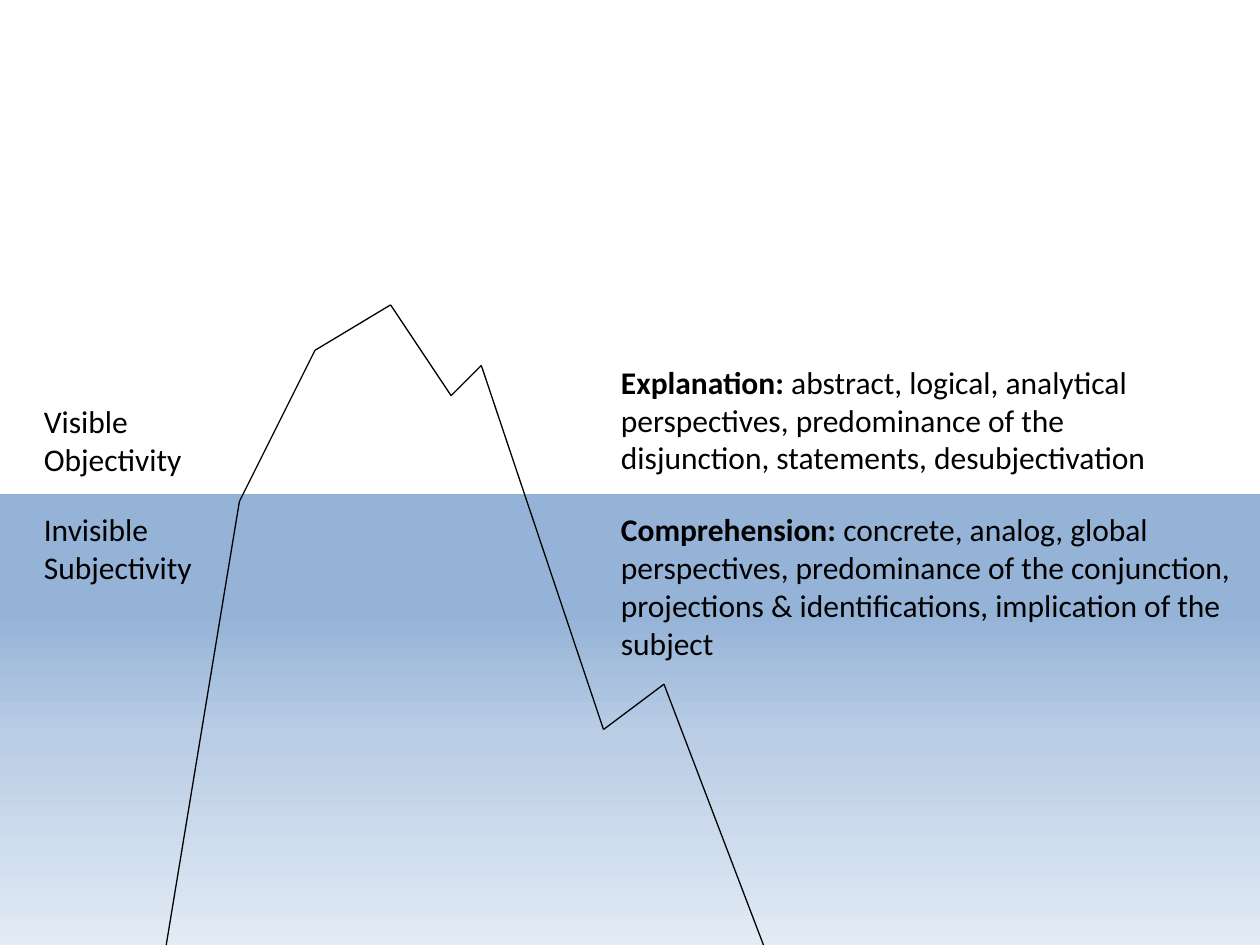
import copy
import itertools

import pptx
import pptx.dml.color
import pptx.enum.shapes
import pptx.enum.text
import pptx.oxml.ns
import pptx.util

Inches = pptx.util.Inches
RGBColor = pptx.dml.color.RGBColor
ANCHOR = pptx.enum.text.MSO_ANCHOR
qn = pptx.oxml.ns.qn

BLACK = RGBColor(0x00, 0x00, 0x00)
WATER = [
    (0.25, RGBColor(0x95, 0xB3, 0xD7)),
    (0.50, RGBColor(0xB9, 0xCD, 0xE5)),
    (1.00, RGBColor(0xE9, 0xEF, 0xF7)),
]

ICEBERG = [(1.25, 7.92), (1.9, 3.98), (2.5, 2.78), (3.1, 2.42), (3.58, 3.14),
           (3.82, 2.9), (4.79, 5.79), (5.27, 5.43), (6.25, 8)]

LEFT_X, RIGHT_X = 0.25, 4.83
ABOVE_Y, BELOW_Y = 2.83, 4

# (left, top, width, height), anchor, paragraphs of (text, bold) runs
LABELS = [
    ((LEFT_X, ABOVE_Y, 1.67, 1.01), ANCHOR.BOTTOM,
     [[("Visible", False)], [("Objectivity", False)]]),
    ((LEFT_X, BELOW_Y, 1.67, 0.71), ANCHOR.TOP,
     [[("Invisible", False)], [("Subjectivity", False)]]),
    ((RIGHT_X, ABOVE_Y, 4.58, 1.01), ANCHOR.TOP,
     [[("Explanation:", True),
       (" abstract, logical, analytical perspectives, predominance of the "
        "disjunction, statements, desubjectivation", False)]]),
    ((RIGHT_X, BELOW_Y, 5.17, 1.31), ANCHOR.TOP,
     [[("Comprehension:", True),
       (" concrete, analog, global perspectives, predominance of the "
        "conjunction, projections & identifications, implication of the "
        "subject", False)]]),
]


def add_water(shapes):
    sp = shapes.add_shape(pptx.enum.shapes.MSO_SHAPE.RECTANGLE,
                          Inches(0), Inches(3.92), Inches(10), Inches(3.83))
    sp.shadow.inherit = False
    sp.line.fill.background()
    sp.fill.gradient()
    sp.fill.gradient_angle = 270
    stops = next(sp._element.spPr.iter(qn("a:gsLst")))
    stops.append(copy.deepcopy(stops[-1]))
    for stop, (position, color) in zip(sp.fill.gradient_stops, WATER):
        stop.position = position
        stop.color.rgb = color


def add_edge(shapes, start, end):
    line = shapes.add_connector(pptx.enum.shapes.MSO_CONNECTOR.STRAIGHT,
                                *map(Inches, start + end))
    line.line.color.rgb = BLACK
    line.line.width = pptx.util.Pt(0.75)
    spPr = line._element.spPr
    spPr.append(spPr.makeelement(qn("a:effectLst"), {}))


def add_label(shapes, box, anchor, paragraphs):
    tf = shapes.add_textbox(*map(Inches, box)).text_frame
    tf.word_wrap = True
    tf.vertical_anchor = anchor
    for i, runs in enumerate(paragraphs):
        p = tf.add_paragraph() if i else tf.paragraphs[0]
        for text, bold in runs:
            r = p.add_run()
            r.text = text
            r.font.name = "Calibri"
            r.font.size = pptx.util.Pt(18)
            r.font.bold = bold
            r.font.color.rgb = BLACK


def main():
    prs = pptx.Presentation()
    prs.slide_width, prs.slide_height = Inches(10), Inches(7.5)
    shapes = prs.slides.add_slide(prs.slide_layouts[6]).shapes
    add_water(shapes)
    for start, end in itertools.pairwise(ICEBERG):
        add_edge(shapes, start, end)
    for label in LABELS:
        add_label(shapes, *label)
    prs.save("out.pptx")


if __name__ == "__main__":
    main()
